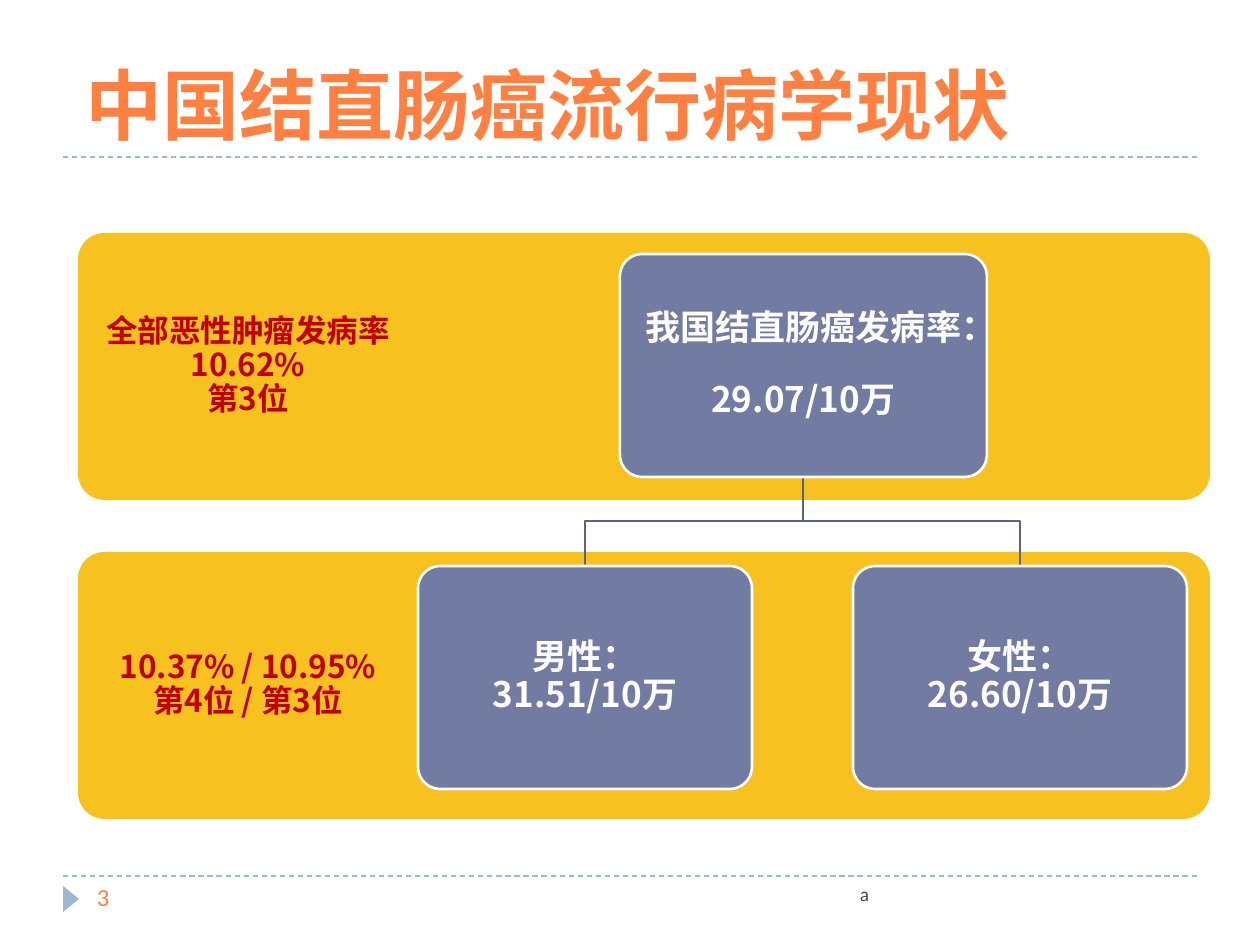
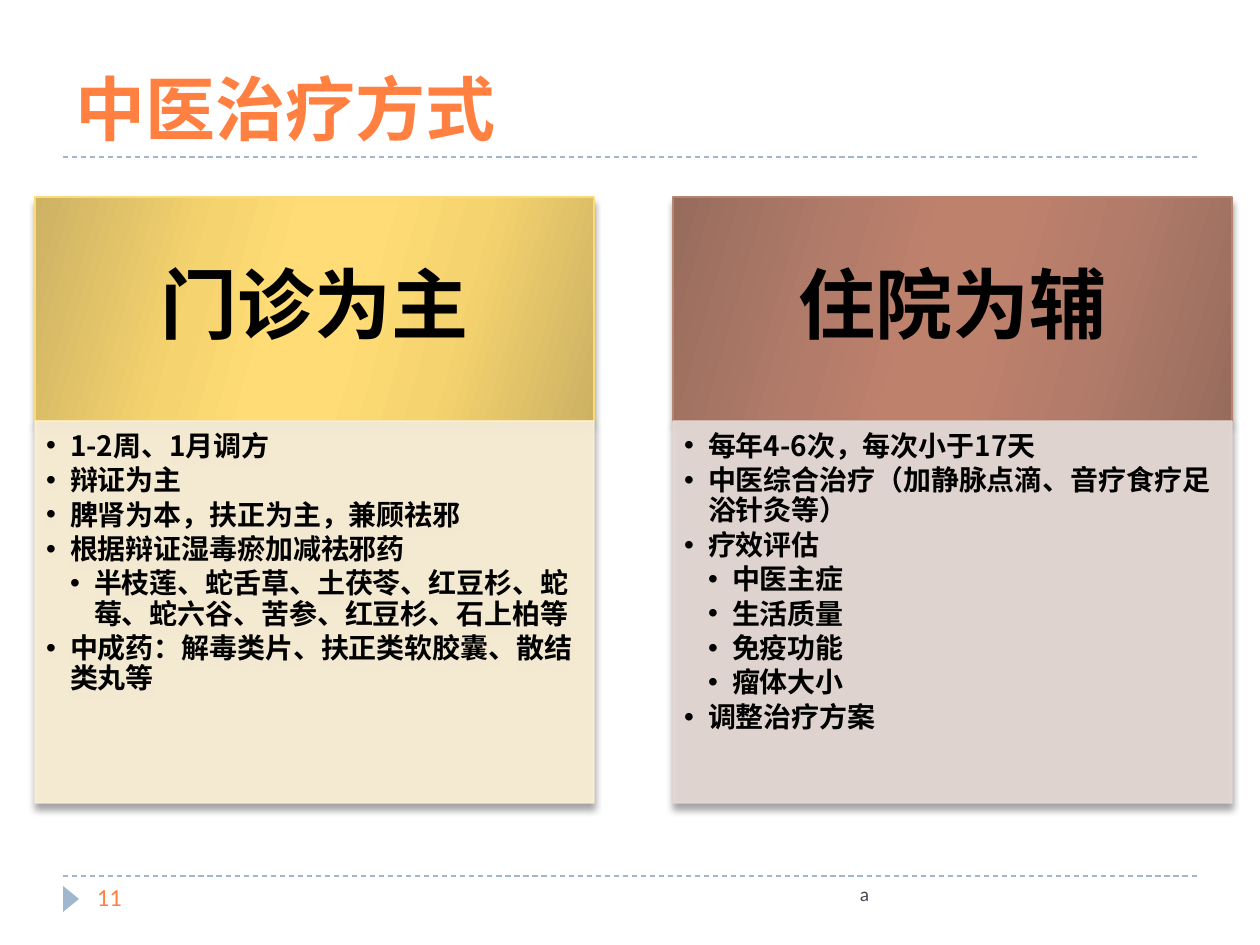
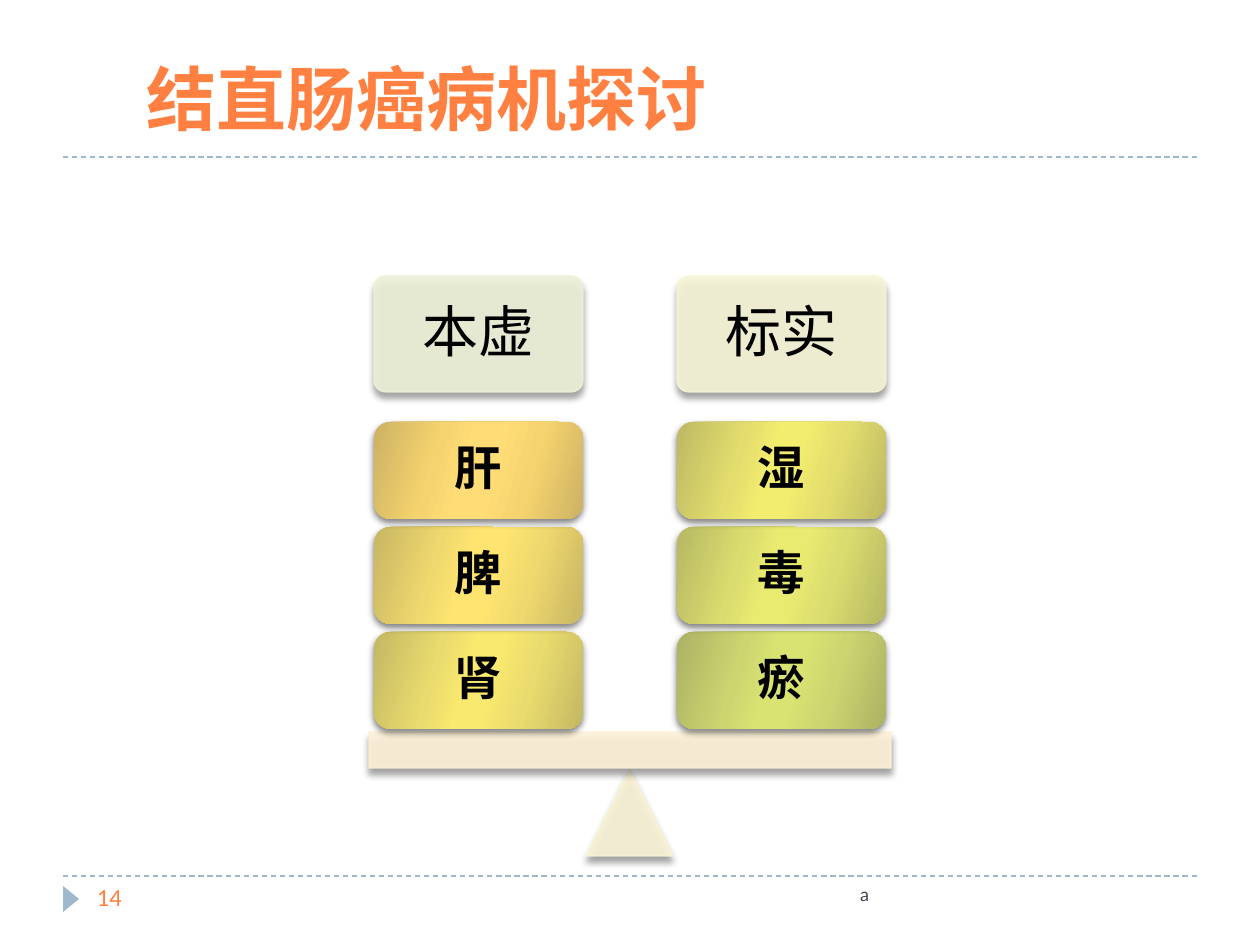
from dataclasses import dataclass
from typing import Optional

from lxml.etree import SubElement
from pptx import Presentation
from pptx.dml.color import RGBColor
from pptx.enum.dml import MSO_LINE
from pptx.enum.lang import MSO_LANGUAGE_ID
from pptx.enum.shapes import MSO_CONNECTOR, MSO_SHAPE
from pptx.enum.text import MSO_ANCHOR, PP_ALIGN
from pptx.oxml.ns import qn
from pptx.util import Emu, Pt

PX_PER_INCH = 126
CJK_FONT = "Noto Sans CJK SC"
LATIN_FONT = "Calibri"
TITLE_FONT = "Arial"

COLORS = {
    "orange": "FF8040", "rule": "9FB8CD", "footer": "464653",
    "white": "FFFFFF", "black": "000000", "red": "C00000",
    "band": "F7C120", "node": "727CA3", "branch": "5B6383",
    "cream": "FDF1D7", "rose": "E6D9D5", "pale_green": "EEF1D7",
    "pale_lime": "F6F5D6", "pale_yellow": "FAF3D6",
    "gold_edge": "FADA7A", "copper_edge": "B88472",
}

# Edge, middle and centre colours of the symmetrical gradients
GRADIENTS = {
    "gold": ("CDB264", "F5D36E", "FFDC75"),
    "copper": ("976C5D", "B37C6A", "BE816C"),
    "yellow": ("C8B663", "EFD86E", "FFE56F"),
    "lemon": ("C3B863", "EADB6E", "F9E96E"),
    "citron": ("BEB963", "E3DD6E", "F2EC6F"),
    "lime": ("B7B863", "DADC6F", "E9EB70"),
    "moss": ("ACB264", "CCD570", "D9E371"),
}


@dataclass(frozen=True)
class Area:
    left: int
    top: int
    width: int
    height: int

    @property
    def center(self) -> int:
        return self.left + self.width // 2

    @property
    def bottom(self) -> int:
        return self.top + self.height


@dataclass(frozen=True)
class Shadow:
    opacity: int
    blur: float
    distance: float


@dataclass(frozen=True)
class Band:
    top: int
    label: str


@dataclass(frozen=True)
class Node:
    area: Area
    text: str


@dataclass(frozen=True)
class Bullet:
    text: str
    level: int = 1


@dataclass(frozen=True)
class Card:
    left: int
    heading: str
    gradient: str
    edge: str
    body: str
    bullets: tuple[Bullet, ...]


@dataclass(frozen=True)
class Stack:
    left: int
    heading: str
    color: str
    blocks: tuple[tuple[str, str], ...]


PANEL_SHADOW = Shadow(40, 4, 3.4)
BLOCK_SHADOW = Shadow(50, 4, 2)


def px(length: int) -> Emu:
    return Emu(round(length * 914400 / PX_PER_INCH))


def rgb(name: str) -> RGBColor:
    return RGBColor.from_string(COLORS[name])


def add_element(parent, tag: str, **attributes):
    return SubElement(parent, qn(tag), {key: str(value) for key, value in attributes.items()})


def set_shadow(shape, shadow: Optional[Shadow]) -> None:
    shape.shadow.inherit = False
    if shadow:
        effects = shape._element.spPr.find(qn("a:effectLst"))
        outer = add_element(effects, "a:outerShdw", blurRad=Pt(shadow.blur), dist=Pt(shadow.distance),
                            dir=90 * 60000, rotWithShape=0)
        color = add_element(outer, "a:srgbClr", val=COLORS["black"])
        add_element(color, "a:alpha", val=shadow.opacity * 1000)


def set_gradient(shape, name: str) -> None:
    edge, middle, center = GRADIENTS[name]
    shape.fill.gradient()
    gradient = shape._element.spPr.find(qn("a:gradFill"))
    for child in list(gradient):
        gradient.remove(child)
    stops = add_element(gradient, "a:gsLst")
    for position, color in zip((0, 30, 45, 55, 73, 100),
                               (edge, middle, center, center, middle, edge)):
        stop = add_element(stops, "a:gs", pos=position * 1000)
        add_element(stop, "a:srgbClr", val=color)
    add_element(gradient, "a:lin", ang=16 * 60000, scaled=0)


def set_alpha(fill_parent, percent: int) -> None:
    color = fill_parent.find(qn("a:solidFill")).find(qn("a:srgbClr"))
    add_element(color, "a:alpha", val=percent * 1000)


def add_panel(page, area: Area, *, kind=MSO_SHAPE.RECTANGLE, fill: str = "", gradient: str = "",
              edge: str = "", edge_width: float = 0.75, opacity: int = 100,
              corner: Optional[float] = None, shadow: Optional[Shadow] = None):
    shape = page.shapes.add_shape(kind, px(area.left), px(area.top), px(area.width), px(area.height))
    set_shadow(shape, shadow)
    if corner is not None:
        shape.adjustments[0] = corner
    if gradient:
        set_gradient(shape, gradient)
    else:
        shape.fill.solid()
        shape.fill.fore_color.rgb = rgb(fill)
    if edge:
        shape.line.color.rgb = rgb(edge)
        shape.line.width = Pt(edge_width)
    else:
        shape.line.fill.background()
    if opacity < 100:
        properties = shape._element.spPr
        set_alpha(properties, opacity)
        set_alpha(properties.find(qn("a:ln")), opacity)
    return shape


def prepare_frame(shape, margins: tuple[int, int], anchor):
    frame = shape.text_frame
    frame.word_wrap = True
    frame.vertical_anchor = anchor
    frame.margin_left = frame.margin_right = px(margins[0])
    frame.margin_top = frame.margin_bottom = px(margins[1])
    return frame


def write_paragraph(para, text: str, *, size: float, color: str = "black", bold: bool = False,
                    font: str = CJK_FONT, align=PP_ALIGN.LEFT, spacing: float = 1.0) -> None:
    """Fill a paragraph; a line feed in the text becomes a line break."""
    para.text = text.replace("\n", "\v")
    para.alignment = align
    para.line_spacing = spacing
    for span in para.runs:
        span.font.size = Pt(size)
        span.font.bold = bold
        span.font.name = font
        span.font.color.rgb = rgb(color)
        span.font.language_id = MSO_LANGUAGE_ID.SIMPLIFIED_CHINESE
        add_element(span.font._element, "a:ea", typeface=CJK_FONT)


def write_centered(shape, text: str, *, margins: tuple[int, int], **style) -> None:
    frame = prepare_frame(shape, margins, MSO_ANCHOR.MIDDLE)
    write_paragraph(frame.paragraphs[0], text, align=PP_ALIGN.CENTER, spacing=0.9, **style)


def add_box(page, area: Area):
    return page.shapes.add_textbox(px(area.left), px(area.top), px(area.width), px(area.height))


def add_label(page, area: Area, text: str, *, anchor=MSO_ANCHOR.TOP, **style) -> None:
    frame = prepare_frame(add_box(page, area), (13, 6), anchor)
    write_paragraph(frame.paragraphs[0], text, **style)


def add_title(page, area: Area, text: str, *, size: int = 40, font: str = TITLE_FONT,
              anchor=MSO_ANCHOR.BOTTOM) -> None:
    add_label(page, area, text, size=size, font=font, color="orange", bold=True, anchor=anchor)


def add_page(deck, number: int):
    """Add a page with its two rules, marker, number and footer."""
    page = deck.slides.add_slide(deck.slide_layouts[6])
    for level in (876, 157):
        rule = page.shapes.add_connector(MSO_CONNECTOR.STRAIGHT, px(63), px(level), px(1197), px(level))
        rule.line.color.rgb = rgb("rule")
        rule.line.width = Pt(0.75)
        rule.line.dash_style = MSO_LINE.DASH
        add_element(rule._element.spPr, "a:effectLst")
    marker = add_panel(page, Area(58, 891, 26, 16), kind=MSO_SHAPE.ISOSCELES_TRIANGLE, fill="rule")
    marker.rotation = 90
    add_label(page, Area(84, 876, 273, 50), str(number), size=14, font=LATIN_FONT, color="orange")
    add_label(page, Area(399, 876, 483, 50), "a", size=11, font=LATIN_FONT, color="footer",
              align=PP_ALIGN.RIGHT)
    return page


def add_branch(page, parent: Area, child: Area) -> None:
    middle = (parent.bottom + child.top) // 2
    builder = page.shapes.build_freeform(px(parent.center), px(parent.bottom))
    corners = ((parent.center, middle), (child.center, middle), (child.center, child.top))
    builder.add_line_segments([(px(left), px(top)) for left, top in corners], close=False)
    branch = builder.convert_to_shape()
    set_shadow(branch, None)
    branch.fill.background()
    branch.line.color.rgb = rgb("branch")
    branch.line.width = Pt(1.5)


def build_incidence(deck) -> None:
    page = add_page(deck, 3)
    add_title(page, Area(73, 20, 1120, 136), "中国结直肠癌流行病学现状", size=44)
    bands = (
        Band(552, "10.37% / 10.95%\n第4位 / 第3位"),
        Band(233, "全部恶性肿瘤发病率10.62%\n第3位"),
    )
    root = Node(Area(620, 254, 367, 223), "我国结直肠癌发病率：\n29.07/10万")
    children = (
        Node(Area(418, 566, 334, 223), "男性：\n31.51/10万"),
        Node(Area(853, 566, 334, 223), "女性：\n26.60/10万"),
    )
    for band in bands:
        add_panel(page, Area(78, band.top, 1132, 267), kind=MSO_SHAPE.ROUNDED_RECTANGLE,
                  fill="band", corner=0.1)
        write_centered(add_box(page, Area(78, band.top, 340, 267)), band.label,
                       margins=(18, 18), size=18, color="red", bold=True)
    for child in children:
        add_branch(page, root.area, child.area)
    for node in (root, *children):
        shape = add_panel(page, node.area, kind=MSO_SHAPE.ROUNDED_RECTANGLE, fill="node",
                          edge="white", edge_width=1.5, corner=0.1)
        write_centered(shape, node.text, margins=(10, 10), size=20, color="white", bold=True)


def add_bullet(para, bullet: Bullet) -> None:
    properties = para._p.get_or_add_pPr()
    properties.set("marL", str(px(24 * bullet.level)))
    properties.set("indent", str(px(-24)))
    add_element(properties, "a:buFont", typeface="Arial")
    add_element(properties, "a:buChar", char="•")
    para.level = bullet.level
    para.space_after = Pt(2.4)
    write_paragraph(para, bullet.text, size=16, bold=True, spacing=0.9)


def add_card(page, card: Card) -> None:
    heading = add_panel(page, Area(card.left, 197, 559, 224), gradient=card.gradient,
                        edge=card.edge, shadow=PANEL_SHADOW)
    write_centered(heading, card.heading, margins=(43, 25), size=44, font=LATIN_FONT, bold=True)
    body = add_panel(page, Area(card.left, 421, 559, 382), fill=card.body, edge=card.body,
                     opacity=90, shadow=PANEL_SHADOW)
    frame = prepare_frame(body, (11, 11), MSO_ANCHOR.TOP)
    frame.margin_right = px(15)
    for index, bullet in enumerate(card.bullets):
        para = frame.add_paragraph() if index else frame.paragraphs[0]
        add_bullet(para, bullet)


def build_treatment(deck) -> None:
    page = add_page(deck, 11)
    add_title(page, Area(63, 38, 1134, 117), "中医治疗方式")
    cards = (
        Card(35, "门诊为主", "gold", "gold_edge", "cream", (
            Bullet("1-2周、1月调方"),
            Bullet("辩证为主"),
            Bullet("脾肾为本，扶正为主，兼顾祛邪"),
            Bullet("根据辩证湿毒瘀加减祛邪药"),
            Bullet("半枝莲、蛇舌草、土茯苓、红豆杉、蛇莓、蛇六谷、苦参、红豆杉、石上柏等", 2),
            Bullet("中成药：解毒类片、扶正类软胶囊、散结类丸等"),
        )),
        Card(673, "住院为辅", "copper", "copper_edge", "rose", (
            Bullet("每年4-6次，每次小于17天"),
            Bullet("中医综合治疗（加静脉点滴、音疗食疗足浴针灸等）"),
            Bullet("疗效评估"),
            Bullet("中医主症", 2),
            Bullet("生活质量", 2),
            Bullet("免疫功能", 2),
            Bullet("瘤体大小", 2),
            Bullet("调整治疗方案"),
        )),
    )
    for card in cards:
        add_card(page, card)


def add_pale_panel(page, area: Area, color: str, kind, corner: Optional[float] = None):
    return add_panel(page, area, kind=kind, fill=color, edge=color, opacity=90,
                     corner=corner, shadow=PANEL_SHADOW)


def add_stack(page, stack: Stack) -> None:
    heading = add_pale_panel(page, Area(stack.left, 276, 209, 116), stack.color,
                             MSO_SHAPE.ROUNDED_RECTANGLE, 0.1)
    write_centered(heading, stack.heading, margins=(16, 16), size=32, font=LATIN_FONT)
    for row, (text, gradient) in reversed(list(enumerate(stack.blocks))):
        block = add_panel(page, Area(stack.left, 422 + 105 * row, 209, 97),
                          kind=MSO_SHAPE.ROUNDED_RECTANGLE, gradient=gradient, shadow=BLOCK_SHADOW)
        write_centered(block, text, margins=(14, 14), size=27, font=LATIN_FONT, bold=True)


def build_pathogenesis(deck) -> None:
    page = add_page(deck, 14)
    add_title(page, Area(134, 49, 806, 97), "结直肠癌病机探讨", font=CJK_FONT, anchor=MSO_ANCHOR.TOP)
    add_pale_panel(page, Area(586, 769, 87, 87), "pale_yellow", MSO_SHAPE.ISOSCELES_TRIANGLE)
    add_pale_panel(page, Area(369, 732, 522, 36), "cream", MSO_SHAPE.RECTANGLE)
    stacks = (
        Stack(374, "本虚", "pale_green", (("肝", "gold"), ("脾", "yellow"), ("肾", "lemon"))),
        Stack(677, "标实", "pale_lime", (("湿", "citron"), ("毒", "lime"), ("瘀", "moss"))),
    )
    for stack in stacks:
        add_stack(page, stack)


def main() -> None:
    deck = Presentation()
    deck.slide_width = px(1260)
    deck.slide_height = px(945)
    build_incidence(deck)
    build_treatment(deck)
    build_pathogenesis(deck)
    deck.save("out.pptx")


if __name__ == "__main__":
    main()
